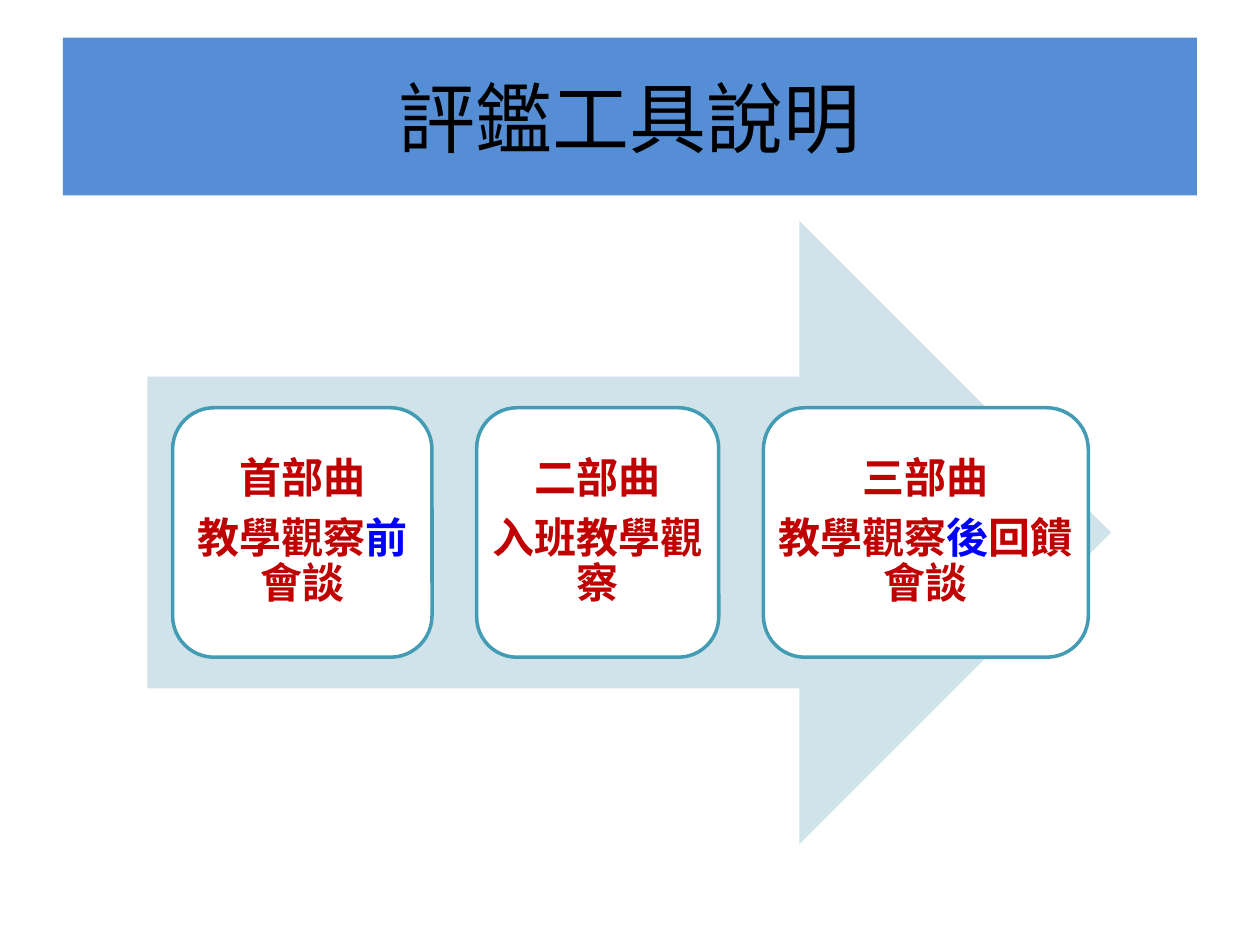
from dataclasses import dataclass

from lxml import etree
from pptx import Presentation
from pptx import util as u
from pptx.dml.color import RGBColor
from pptx.enum import shapes, text
from pptx.oxml.ns import qn

# Content: each card has paragraphs made of (wording, colour role) spans
TITLE = [[("評鑑工具說明", "title")]]
CARDS = [
    (5.23, [[("首部曲", "body")],
            [("教學觀察", "body"), ("前", "accent"), ("會談", "body")]]),
    (4.88, [[("二部曲", "body")],
            [("入班教學觀察", "body")]]),
    (6.55, [[("三部曲", "body")],
            [("教學觀察", "body"), ("後", "accent"), ("回饋會談", "body")]]),
]


@dataclass(frozen=True)
class Theme:
    banner: str = "558ED5"
    arrow: str = "D0E3EA"
    card: str = "FFFFFF"
    border: str = "449CB4"
    title: str = "000000"
    body: str = "C00000"
    accent: str = "0000FF"
    title_font: str = "Calibri"
    body_font: str = "Noto Sans CJK SC"
    title_size: int = 44
    body_size: int = 24


THEME = Theme()

# Layout in centimetres
BANNER = (1.27, 0.76, 22.86, 3.18)
ARROW = (2.97, 4.45, 19.43, 12.57)
FIRST_CARD_LEFT, CARD_GAP, CARD_HEIGHT = 3.48, 0.9, 5.03


def add_block(page, kind, area, fill, border=None):
    block = page.shapes.add_shape(kind, *(u.Cm(length) for length in area))
    block.shadow.inherit = False
    block.fill.solid()
    block.fill.fore_color.rgb = RGBColor.from_string(fill)
    if border:
        block.line.color.rgb = RGBColor.from_string(border)
        block.line.width = u.Pt(2)
    else:
        block.line.fill.background()
    return block


def write(block, paragraphs, font, size, bold=False):
    frame = block.text_frame
    frame.word_wrap = True
    frame.vertical_anchor = text.MSO_ANCHOR.MIDDLE
    for index, spans in enumerate(paragraphs):
        para = frame.add_paragraph() if index else frame.paragraphs[0]
        para.alignment = text.PP_ALIGN.CENTER
        for wording, role in spans:
            span = para.add_run()
            span.text = wording
            span.font.name = font
            span.font.size = u.Pt(size)
            span.font.bold = bold
            span.font.color.rgb = RGBColor.from_string(getattr(THEME, role))
            # East Asian typeface for the Chinese characters
            east_asian = etree.Element(qn("a:ea"), typeface=THEME.body_font)
            span.font._element.find(qn("a:latin")).addnext(east_asian)


def main():
    deck = Presentation()
    deck.slide_width, deck.slide_height = u.Cm(25.4), u.Cm(19.05)
    page = deck.slides.add_slide(deck.slide_layouts[6])

    # Title banner
    banner = add_block(page, shapes.MSO_SHAPE.RECTANGLE, BANNER, THEME.banner)
    write(banner, TITLE, THEME.title_font, THEME.title_size)

    # Background arrow
    add_block(page, shapes.MSO_SHAPE.RIGHT_ARROW, ARROW, THEME.arrow)

    # Cards, centred on the arrow's height
    left = FIRST_CARD_LEFT
    top = ARROW[1] + (ARROW[3] - CARD_HEIGHT) / 2
    for width, paragraphs in CARDS:
        card = add_block(page, shapes.MSO_SHAPE.ROUNDED_RECTANGLE,
                         (left, top, width, CARD_HEIGHT), THEME.card, THEME.border)
        frame = card.text_frame
        frame.margin_left = frame.margin_right = 0
        frame.margin_top = frame.margin_bottom = 0
        write(card, paragraphs, THEME.body_font, THEME.body_size, bold=True)
        for para in frame.paragraphs:
            para.line_spacing = 0.9
            para.space_after = u.Pt(0.35 * THEME.body_size)
        left += width + CARD_GAP

    deck.save("out.pptx")


if __name__ == "__main__":
    main()
